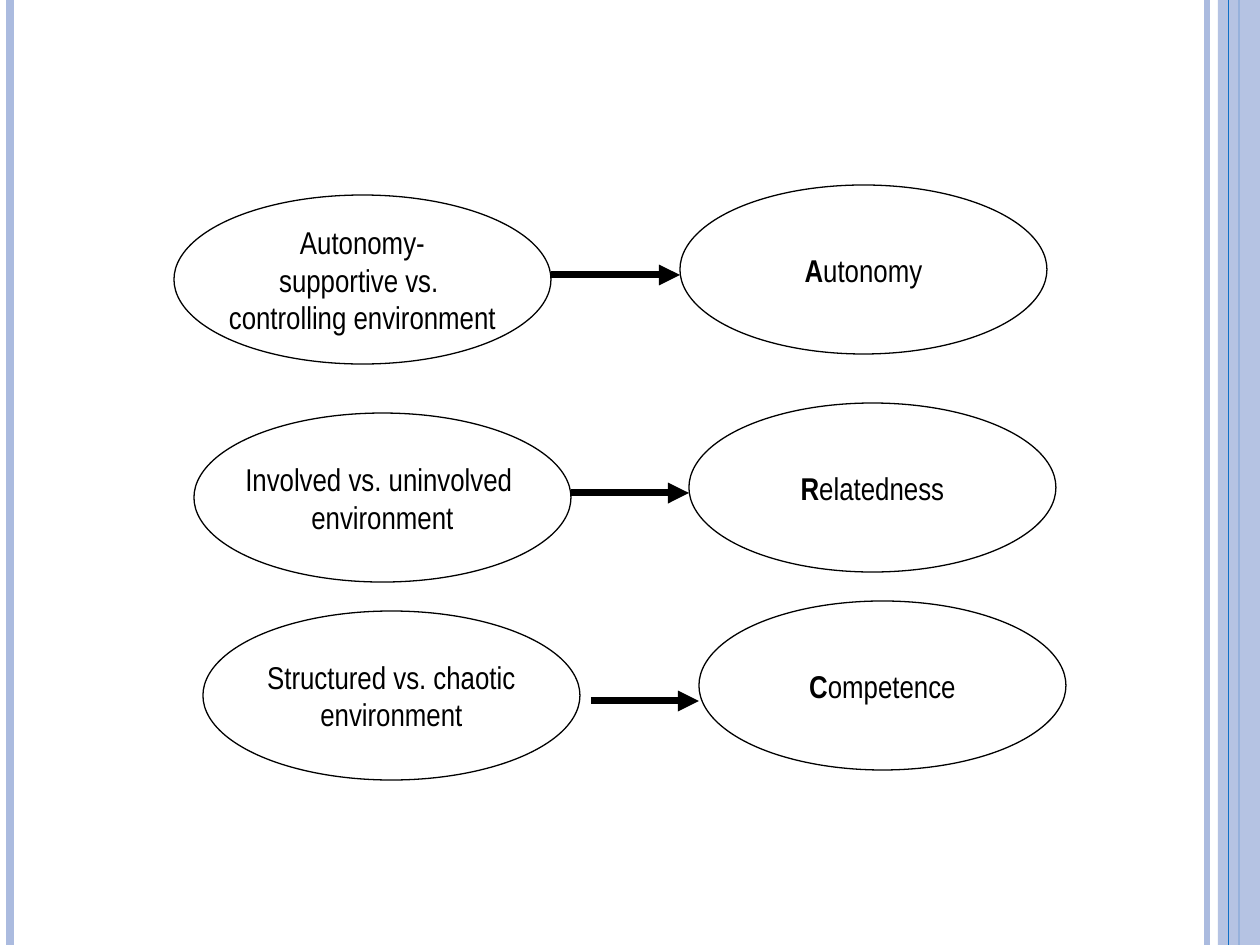
from dataclasses import dataclass

from lxml import etree
from pptx import Presentation
from pptx.dml.color import RGBColor
from pptx.enum.shapes import MSO_CONNECTOR, MSO_SHAPE
from pptx.enum.text import MSO_ANCHOR, PP_ALIGN
from pptx.oxml.ns import qn
from pptx.util import Emu, Pt

STRAIGHT = MSO_CONNECTOR.STRAIGHT
OVAL, RECTANGLE = MSO_SHAPE.OVAL, MSO_SHAPE.RECTANGLE
CENTER, MIDDLE = PP_ALIGN.CENTER, MSO_ANCHOR.MIDDLE

PX_PER_INCH = 126
SLIDE_WIDTH, SLIDE_HEIGHT = 1260, 945
OVAL_HEIGHT, ENVIRONMENT_WIDTH, NEED_WIDTH = 169, 377, 367
ENVIRONMENT_DROP = 10  # environments sit slightly lower than the needs


@dataclass(frozen=True)
class Theme:
    ink: RGBColor = RGBColor(0x00, 0x00, 0x00)
    paper: RGBColor = RGBColor(0xFF, 0xFF, 0xFF)
    band: RGBColor = RGBColor(0xAB, 0xBB, 0xDF)
    accent: RGBColor = RGBColor(0x0F, 0x6F, 0xC6)
    font: str = "Arial Narrow"
    text_size: int = 18
    outline: float = 0.75
    arrow: float = 4


THEME = Theme()

# row top, environment left, environment lines, arrow start, arrow drop, need left, need
ROWS = [
    (185, 174, ["Autonomy-", "supportive vs. ", "controlling environment"],
     551, 90, 680, "Autonomy"),
    (403, 194, ["Involved vs. uninvolved ", "environment"],
     571, 90, 689, "Relatedness"),
    (601, 203, ["Structured vs. chaotic", "environment"],
     591, 100, 699, "Competence"),
]


def px(value):
    return Emu(round(value * 914400 / PX_PER_INCH))


def add_line(slide, start, end, color, width, arrowhead=False):
    line = slide.shapes.add_connector(STRAIGHT, *map(px, (*start, *end)))
    line.line.color.rgb = color
    line.line.width = Pt(width)
    if arrowhead:
        etree.SubElement(line.line._get_or_add_ln(), qn("a:tailEnd"), type="triangle")
    etree.SubElement(line._element.spPr, qn("a:effectLst"))


def add_filled_shape(slide, kind, box, color):
    shape = slide.shapes.add_shape(kind, *map(px, box))
    shape.shadow.inherit = False
    shape.fill.solid()
    shape.fill.fore_color.rgb = color
    return shape


def add_run(paragraph, text, bold=False):
    run = paragraph.add_run()
    run.text = text
    run.font.name = THEME.font
    run.font.size = Pt(THEME.text_size)
    run.font.bold = bold
    run.font.color.rgb = THEME.ink


def add_oval(slide, box, lines, bold_initial=False):
    oval = add_filled_shape(slide, OVAL, box, THEME.paper)
    oval.line.color.rgb = THEME.ink
    oval.line.width = Pt(THEME.outline)
    frame = oval.text_frame
    frame.word_wrap = False
    frame.vertical_anchor = MIDDLE
    for index, text in enumerate(lines):
        paragraph = frame.add_paragraph() if index else frame.paragraphs[0]
        paragraph.alignment = CENTER
        if bold_initial:
            add_run(paragraph, text[0], bold=True)
            text = text[1:]
        add_run(paragraph, text)


def add_side_bands(slide, width, height):
    """Draw the vertical stripes along both edges of the slide."""
    def stripe(x, color, weight):
        add_line(slide, (x, 0), (x, height), color, weight)

    stripe(width - 53, THEME.band, 3)
    stripe(10, THEME.band, 4.5)
    stripe(width - 21, THEME.accent, 1.5)
    band = add_filled_shape(slide, RECTANGLE, (width - 42, 0, 42, height), THEME.band)
    band.line.fill.background()
    color = band._element.spPr.find(qn("a:solidFill"))[0]
    etree.SubElement(color, qn("a:alpha"), val="87000")
    stripe(width - 31.5, THEME.accent, 0.75)


def add_row(slide, top, environment_left, environment, arrow_start, arrow_drop,
            need_left, need):
    """Draw an environment, the need it feeds and the arrow between them."""
    add_oval(slide, (need_left, top, NEED_WIDTH, OVAL_HEIGHT), [need], bold_initial=True)
    add_oval(slide, (environment_left, top + ENVIRONMENT_DROP, ENVIRONMENT_WIDTH,
                     OVAL_HEIGHT), environment)
    arrow_y = top + arrow_drop
    add_line(slide, (arrow_start, arrow_y), (need_left, arrow_y), THEME.ink,
             THEME.arrow, arrowhead=True)


def main():
    presentation = Presentation()
    presentation.slide_width = px(SLIDE_WIDTH)
    presentation.slide_height = px(SLIDE_HEIGHT)
    slide = presentation.slides.add_slide(presentation.slide_layouts[6])
    slide.background.fill.solid()
    slide.background.fill.fore_color.rgb = THEME.paper
    add_side_bands(slide, SLIDE_WIDTH, SLIDE_HEIGHT)
    for row in ROWS:
        add_row(slide, *row)
    presentation.save("out.pptx")


if __name__ == "__main__":
    main()
